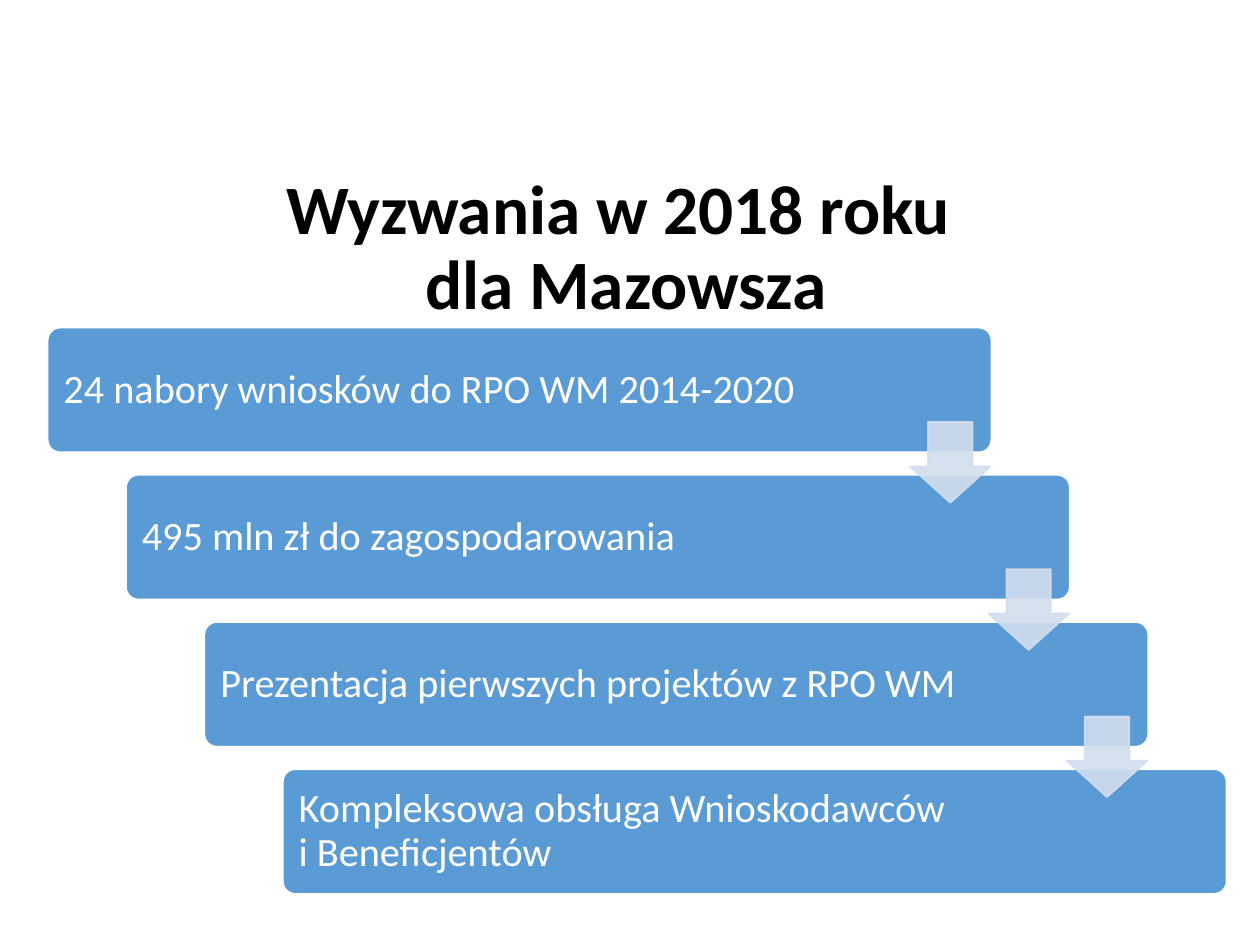
from lxml.etree import SubElement
from pptx import Presentation
from pptx.dml.color import RGBColor
from pptx.enum.shapes import MSO_SHAPE as Shape
from pptx.enum.text import MSO_ANCHOR as Anchor, PP_ALIGN as Align
from pptx.oxml.ns import qn
from pptx.util import Pt

TITLE = ["Wyzwania w 2018 roku ", "dla Mazowsza"]
STEPS = [
    ["24 nabory wniosków do RPO WM 2014-2020"],
    ["495 mln zł do zagospodarowania"],
    ["Prezentacja pierwszych projektów z RPO WM"],
    ["Kompleksowa obsługa Wnioskodawców ", "i Beneficjentów"],
]
STEP_LEFT, STEP_TOP = 27.2, 187.2
STEP_WIDTH, STEP_HEIGHT = 539.3, 71.3
SHIFT_RIGHT, SHIFT_DOWN = 44.8, 84.1
ARROW_LEFT, ARROW_TOP, ARROW_SIZE = 520, 241.2, 46.1


def paint(color_format, color):
    color_format.rgb = RGBColor.from_string(color)


def write_lines(frame, lines, size, color, bold=False, align=Align.LEFT):
    frame.word_wrap = True
    frame.vertical_anchor = Anchor.MIDDLE
    paragraph = frame.paragraphs[0]
    paragraph.alignment = align
    paragraph.line_spacing = 0.9
    for index, line in enumerate(lines):
        if index:
            paragraph.add_line_break()
        run = paragraph.add_run()
        run.text = line
        run.font.name = "Calibri"
        run.font.size = Pt(size)
        run.font.bold = bold
        paint(run.font.color, color)


def add_title(slide):
    box = slide.shapes.add_textbox(Pt(47.5), Pt(105.8), Pt(620.6), Pt(73.4))
    write_lines(box.text_frame, TITLE, 39.6, "000000", True, Align.CENTER)


def add_filled_shape(slide, kind, left, top, width, height, fill, line):
    shape = slide.shapes.add_shape(kind, Pt(left), Pt(top), Pt(width), Pt(height))
    shape.shadow.inherit = False
    shape.fill.solid()
    paint(shape.fill.fore_color, fill)
    shape.line.width = Pt(1)
    paint(shape.line.color, line)
    return shape


def add_step(slide, index, lines):
    shape = add_filled_shape(
        slide, Shape.ROUNDED_RECTANGLE,
        STEP_LEFT + index * SHIFT_RIGHT, STEP_TOP + index * SHIFT_DOWN,
        STEP_WIDTH, STEP_HEIGHT, "5B9BD5", "FFFFFF")
    shape.adjustments[0] = 0.1
    frame = shape.text_frame
    frame.margin_left = frame.margin_top = frame.margin_bottom = Pt(7)
    frame.margin_right = Pt(90)
    write_lines(frame, lines, 23, "FFFFFF")


def add_arrow(slide, index):
    arrow = add_filled_shape(
        slide, Shape.DOWN_ARROW,
        ARROW_LEFT + index * SHIFT_RIGHT, ARROW_TOP + index * SHIFT_DOWN,
        ARROW_SIZE, ARROW_SIZE, "D2DEEF", "D2DEEF")
    arrow.adjustments[0] = 0.55
    arrow.adjustments[1] = 0.45
    for color in arrow._element.spPr.iter(qn("a:srgbClr")):
        SubElement(color, qn("a:alpha"), val="90000")


def main():
    presentation = Presentation()
    presentation.slide_width, presentation.slide_height = Pt(720), Pt(540)
    slide = presentation.slides.add_slide(presentation.slide_layouts[6])
    add_title(slide)
    for index, lines in enumerate(STEPS):
        add_step(slide, index, lines)
    for index in range(len(STEPS) - 1):
        add_arrow(slide, index)
    presentation.save("out.pptx")


if __name__ == "__main__":
    main()
